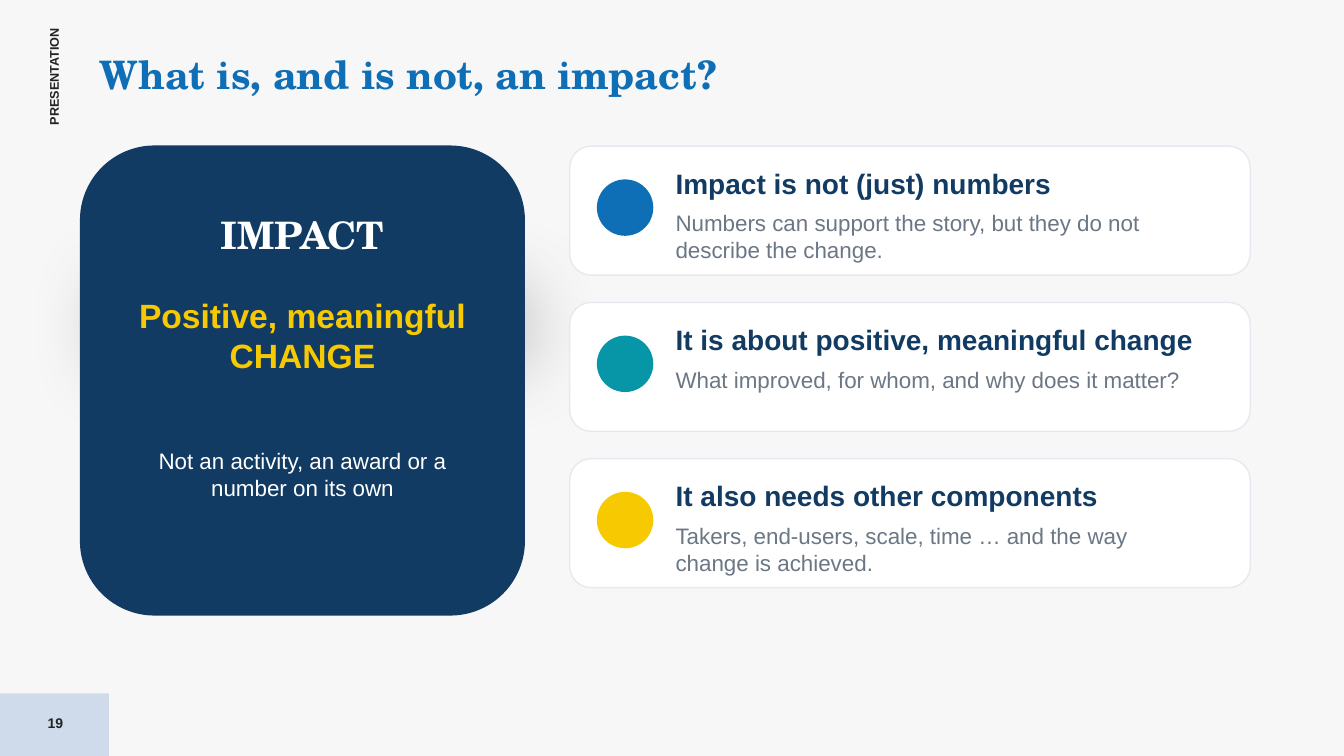
from lxml import etree
from pptx import Presentation
from pptx.dml.color import RGBColor
from pptx.enum.shapes import MSO_SHAPE
from pptx.enum.text import MSO_ANCHOR, PP_ALIGN
from pptx.oxml.ns import qn
from pptx.util import Inches, Pt

BACKGROUND = RGBColor(0xF7, 0xF7, 0xF7)
PALE_BLUE = RGBColor(0xCF, 0xDB, 0xEA)
INK = RGBColor(0x22, 0x22, 0x22)
BLUE = RGBColor(0x0E, 0x6E, 0xB6)
NAVY = RGBColor(0x12, 0x3B, 0x63)
TEAL = RGBColor(0x07, 0x96, 0xA8)
YELLOW = RGBColor(0xF6, 0xC9, 0x00)
WHITE = RGBColor(0xFF, 0xFF, 0xFF)
BORDER = RGBColor(0xE4, 0xEA, 0xF0)
GREY = RGBColor(0x6B, 0x77, 0x85)

SERIF = "TeX Gyre Schola"
SANS = "Arial"

section = "PRESENTATION"
page = "19"
title = "What is, and is not, an impact?"
impact = "IMPACT"
definition = "Positive, meaningful CHANGE"
exclusion = "Not an activity, an award or a number on its own"
points = [
    (BLUE, "Impact is not (just) numbers",
     "Numbers can support the story, but they do not describe the change."),
    (TEAL, "It is about positive, meaningful change",
     "What improved, for whom, and why does it matter?"),
    (YELLOW, "It also needs other components",
     "Takers, end-users, scale, time … and the way change is achieved."),
]

CARD_TOP = 1.45
CARD_PITCH = 1.55

prs = Presentation()
prs.slide_width = Inches(13.33)
prs.slide_height = Inches(7.5)
slide = prs.slides.add_slide(prs.slide_layouts[6])
slide.background.fill.solid()
slide.background.fill.fore_color.rgb = BACKGROUND


def add_panel(kind, left, top, width, height, fill, border=None):
    panel = slide.shapes.add_shape(
        kind, Inches(left), Inches(top), Inches(width), Inches(height))
    panel.shadow.inherit = False
    panel.fill.solid()
    panel.fill.fore_color.rgb = fill
    if border is None:
        panel.line.fill.background()
    else:
        panel.line.color.rgb = border
        panel.line.width = Pt(1)
    return panel


def add_text(text, left, top, width, height, size, color, font=SANS, bold=False,
             centered=False, inset=0, wrap=True, rotation=0):
    box = slide.shapes.add_textbox(
        Inches(left), Inches(top), Inches(width), Inches(height))
    box.rotation = rotation
    frame = box.text_frame
    frame.word_wrap = wrap
    frame.margin_left = frame.margin_right = Inches(inset)
    frame.margin_top = frame.margin_bottom = Inches(inset)
    frame.vertical_anchor = MSO_ANCHOR.MIDDLE if centered else MSO_ANCHOR.TOP
    paragraph = frame.paragraphs[0]
    paragraph.alignment = PP_ALIGN.CENTER if centered else PP_ALIGN.LEFT
    run = paragraph.add_run()
    run.text = text
    run.font.name = font
    run.font.size = Pt(size)
    run.font.bold = bold
    run.font.color.rgb = color


def add_soft_shadow(panel, blur, distance, opacity):
    effects = panel._element.spPr.find(qn("a:effectLst"))
    shadow = etree.SubElement(
        effects, qn("a:outerShdw"), blurRad=str(Pt(blur)), dist=str(Pt(distance)),
        dir=str(90 * 60000), algn="t", rotWithShape="0")
    tint = etree.SubElement(shadow, qn("a:srgbClr"), val="000000")
    etree.SubElement(tint, qn("a:alpha"), val=str(opacity * 1000))


add_panel(MSO_SHAPE.RECTANGLE, 0, 6.88, 1.08, 0.62, PALE_BLUE)
add_text(section, 0.04, 0.67, 0.99, 0.15, 9, INK, bold=True, wrap=False, rotation=270)
add_text(page, 0, 6.97, 1.1, 0.4, 10, INK, bold=True, centered=True)
glow = add_panel(MSO_SHAPE.RECTANGLE, 1.11, 2.64, 4.03, 0.62, BLUE)
add_soft_shadow(glow, blur=60, distance=20, opacity=40)
add_text(title, 0.99, 0.5, 11.7, 0.47, 28, BLUE, font=SERIF, bold=True)

add_panel(MSO_SHAPE.ROUNDED_RECTANGLE, 0.8, CARD_TOP, 4.4, 4.65, NAVY, border=NAVY)
add_text(impact, 1.15, 2, 3.7, 0.65, 27, WHITE, font=SERIF, bold=True, centered=True)
add_text(definition, 1.15, 2.92, 3.7, 0.81, 24, YELLOW, bold=True, centered=True)
add_text(exclusion, 1.15, 4.41, 3.7, 0.58, 16, WHITE, centered=True, inset=0.02)

for index, (accent, heading, detail) in enumerate(points):
    top = CARD_TOP + index * CARD_PITCH
    add_panel(MSO_SHAPE.ROUNDED_RECTANGLE, 5.65, top, 6.75, 1.28, WHITE, border=BORDER)
    add_panel(MSO_SHAPE.OVAL, 5.92, top + 0.33, 0.56, 0.56, accent)
    add_text(heading, 6.7, top + 0.2, 5.35, 0.34, 20, NAVY, bold=True)
    add_text(detail, 6.7, top + 0.63, 5.25, 0.54, 16, GREY)

prs.save("out.pptx")
